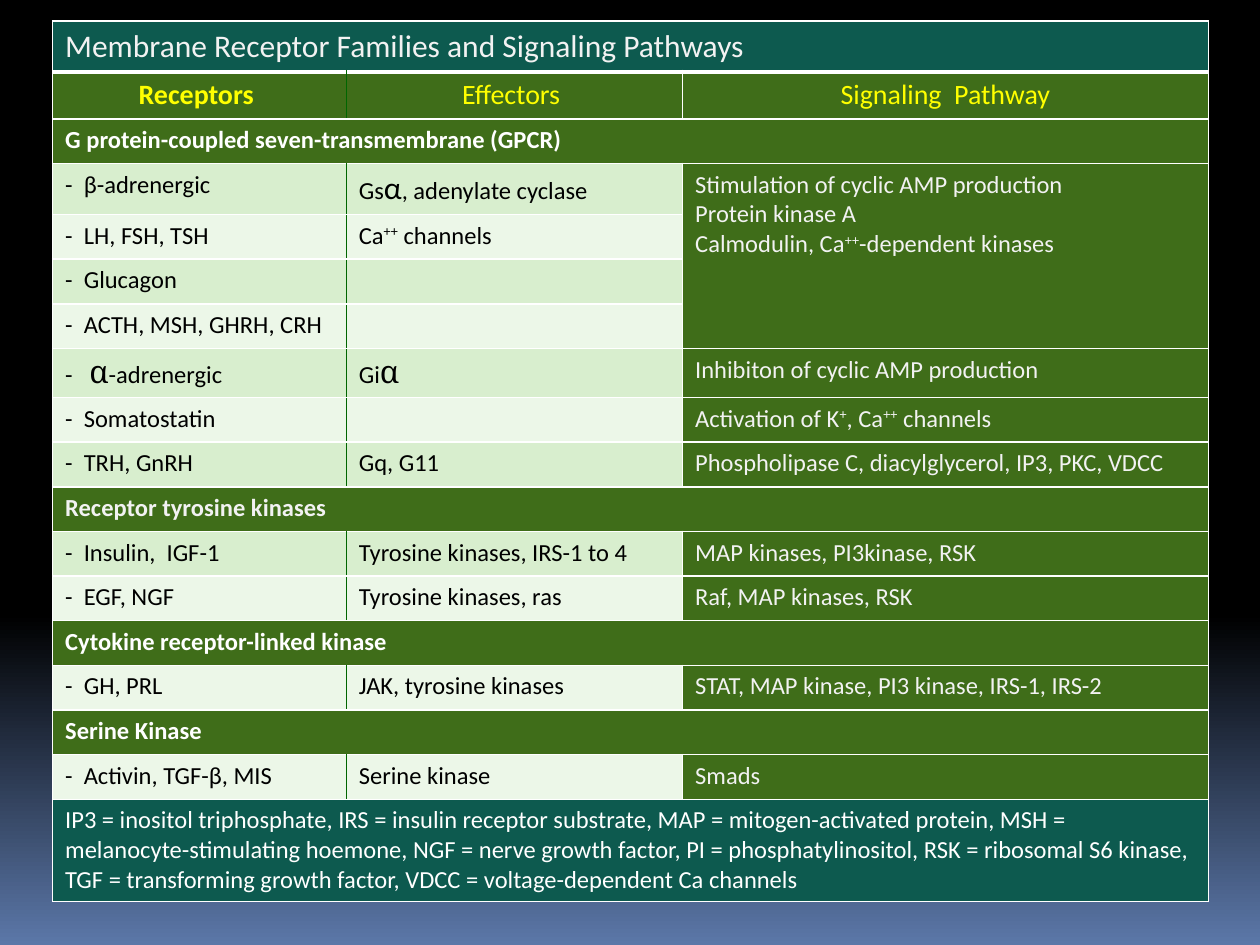
"""Build a slide with a table of membrane receptor families and signaling pathways."""
from copy import deepcopy
from dataclasses import dataclass

from lxml.etree import SubElement
from pptx import Presentation
from pptx.dml.color import RGBColor as Rgb
from pptx.enum.text import PP_ALIGN as Align
from pptx.oxml.ns import qn
from pptx.util import Cm, Pt

COLORS = {
    "black": "000000", "sky": "5B77A8", "white": "FFFFFF", "pale": "F2F2F2",
    "yellow": "FFFF00", "teal": "0D5A4F", "green": "3F6D19", "divider": "006600",
    "band_dark": "D8EECE", "band_light": "ECF7E8",
}
COLUMN_WIDTHS = (5.92, 6.78, 10.6)
ROW_HEIGHT, NOTE_HEIGHT = 0.9, 1.8


@dataclass(frozen=True)
class Piece:
    text: str
    size: int | None = None
    font: str = "Calibri"
    superscript: bool = False


Line = tuple[str | Piece, ...]


@dataclass(frozen=True)
class Banner:
    text: str
    fill: str = "green"
    color: str = "white"
    size: int = 14
    bold: bool = True


@dataclass(frozen=True)
class Entry:
    receptor: Line
    effector: Line = ()
    pathway: tuple[Line, ...] = ()
    pathway_rows: int = 1


PLUS = Piece("+", superscript=True)
PLUS_PLUS = Piece("++", superscript=True)
ALPHA = Piece("α", 18)
CAMBRIA_ALPHA = Piece("α", 18, "Cambria")
HEADINGS = ("Receptors ", "Effectors ", "Signaling  Pathway")
NOTE = (
    "IP3 = inositol triphosphate, IRS = insulin receptor substrate, "
    "MAP = mitogen-activated protein, MSH = melanocyte-stimulating hoemone, "
    "NGF = nerve growth factor, PI = phosphatylinositol, RSK = ribosomal S6 kinase, "
    "TGF = transforming growth factor, VDCC = voltage-dependent Ca channels"
)
ROWS = (
    Banner("Membrane Receptor Families and Signaling Pathways", "teal", "pale", 18, False),
    HEADINGS,
    Banner("G protein-coupled seven-transmembrane (GPCR)"),
    Entry(("-  β-adrenergic",), ("Gs", ALPHA, ", adenylate cyclase"),
          (("Stimulation of cyclic AMP production",), ("Protein kinase A",),
           ("Calmodulin, Ca", PLUS_PLUS, "-dependent kinases")), 4),
    Entry(("-  LH, FSH, TSH",), ("Ca", PLUS_PLUS, " channels")),
    Entry(("-  Glucagon",)),
    Entry(("-  ACTH, MSH, GHRH, CRH",)),
    Entry(("-   ", CAMBRIA_ALPHA, "-adrenergic"), ("Gi", CAMBRIA_ALPHA),
          (("Inhibiton of cyclic AMP production",),)),
    Entry(("-  Somatostatin",), (),
          (("Activation of K", PLUS, ", Ca", PLUS_PLUS, " channels"),)),
    Entry(("-  TRH, GnRH",), ("Gq, G11",),
          (("Phospholipase C, diacylglycerol, IP3, PKC, VDCC",),)),
    Banner("Receptor tyrosine kinases", color="pale"),
    Entry(("-  Insulin,  IGF-1",), ("Tyrosine kinases, IRS-1 to 4",),
          (("MAP kinases, PI3kinase, RSK",),)),
    Entry(("-  EGF, NGF",), ("Tyrosine kinases, ras",), (("Raf, MAP kinases, RSK",),)),
    Banner("Cytokine receptor-linked kinase"),
    Entry(("-  GH, PRL",), ("JAK, tyrosine kinases",),
          (("STAT, MAP kinase, PI3 kinase, IRS-1, IRS-2",),)),
    Banner("Serine Kinase"),
    Entry(("-  Activin, TGF-β, MIS",), ("Serine kinase",), (("Smads",),)),
    Banner(NOTE, "teal", bold=False),
)


def rgb(name: str) -> Rgb:
    return Rgb.from_string(COLORS[name])


def write_text(cell, lines: tuple[Line, ...], *, color: str, size: int = 14,
               bold: bool = False, align: Align = Align.LEFT) -> None:
    frame = cell.text_frame
    for index, line in enumerate(lines or ((),)):
        paragraph = frame.add_paragraph() if index else frame.paragraphs[0]
        paragraph.alignment = align
        for part in line:
            piece = Piece(part) if isinstance(part, str) else part
            run = paragraph.add_run()
            run.text = piece.text
            run.font.name = piece.font
            run.font.size = Pt(piece.size or size)
            run.font.bold = bold
            run.font.color.rgb = rgb(color)
            if piece.superscript:
                run._r.get_or_add_rPr().set("baseline", "30000")
        if not line:
            SubElement(paragraph._p, qn("a:endParaRPr"), sz=str(size * 100))


def style_cell(cell, fill: str, *, left: str = "white", right: str = "white",
               bottom_width: float = 1) -> None:
    properties = cell._tc.get_or_add_tcPr()
    sides = (("L", left, 1), ("R", right, 1), ("T", "white", 1), ("B", "white", bottom_width))
    for side, color, width in sides:
        border = SubElement(properties, qn(f"a:ln{side}"), w=str(Pt(width)))
        solid = SubElement(border, qn("a:solidFill"))
        SubElement(solid, qn("a:srgbClr"), val=COLORS[color])
    cell.fill.solid()
    cell.fill.fore_color.rgb = rgb(fill)


def style_row(table, row: int, fills: tuple[str, str, str]) -> None:
    style_cell(table.cell(row, 0), fills[0], right="divider")
    style_cell(table.cell(row, 1), fills[1], left="divider")
    style_cell(table.cell(row, 2), fills[2])


def draw_banner(table, row: int, banner: Banner) -> None:
    for column in range(len(COLUMN_WIDTHS)):
        style_cell(table.cell(row, column), banner.fill, bottom_width=1 if row else 3)
    first = table.cell(row, 0)
    first.merge(table.cell(row, 2))
    write_text(first, ((banner.text,),), color=banner.color, size=banner.size, bold=banner.bold)


def draw_headings(table, row: int, headings: tuple[str, ...]) -> None:
    style_row(table, row, ("green",) * 3)
    for column, heading in enumerate(headings):
        write_text(table.cell(row, column), ((heading,),), color="yellow", size=16,
                   bold=column == 0, align=Align.CENTER)


def draw_entry(table, row: int, entry: Entry) -> None:
    band = "band_dark" if row % 2 else "band_light"
    style_row(table, row, (band, band, "green"))
    write_text(table.cell(row, 0), (entry.receptor,), color="black")
    write_text(table.cell(row, 1), (entry.effector,), color="black")
    pathway = table.cell(row, 2)
    if entry.pathway_rows > 1:
        pathway.merge(table.cell(row + entry.pathway_rows - 1, 2))
    write_text(pathway, entry.pathway, color="pale")


def paint_background(slide) -> None:
    fill = slide.background.fill
    fill.gradient()
    fill.gradient_angle = 270
    first = fill.gradient_stops[0]._gs
    first.addnext(deepcopy(first))
    stops = ((0, "black"), (0.65, "black"), (1, "sky"))
    for stop, (position, color) in zip(fill.gradient_stops, stops):
        stop.position = position
        stop.color.rgb = rgb(color)


def draw_table(slide) -> None:
    heights = [ROW_HEIGHT] * (len(ROWS) - 1) + [NOTE_HEIGHT]
    table = slide.shapes.add_table(len(ROWS), len(COLUMN_WIDTHS), Cm(1.06), Cm(0.42),
                                   Cm(sum(COLUMN_WIDTHS)), Cm(sum(heights))).table
    table.first_row = table.horz_banding = False
    for column, width in zip(table.columns, COLUMN_WIDTHS):
        column.width = Cm(width)
    for index, (content, height) in enumerate(zip(ROWS, heights)):
        table.rows[index].height = Cm(height)
        if isinstance(content, Banner):
            draw_banner(table, index, content)
        elif isinstance(content, Entry):
            draw_entry(table, index, content)
        else:
            draw_headings(table, index, content)


def main() -> None:
    presentation = Presentation()
    presentation.slide_width, presentation.slide_height = Cm(25.4), Cm(19.05)
    slide = presentation.slides.add_slide(presentation.slide_layouts[6])
    paint_background(slide)
    draw_table(slide)
    presentation.save("out.pptx")


if __name__ == "__main__":
    main()
